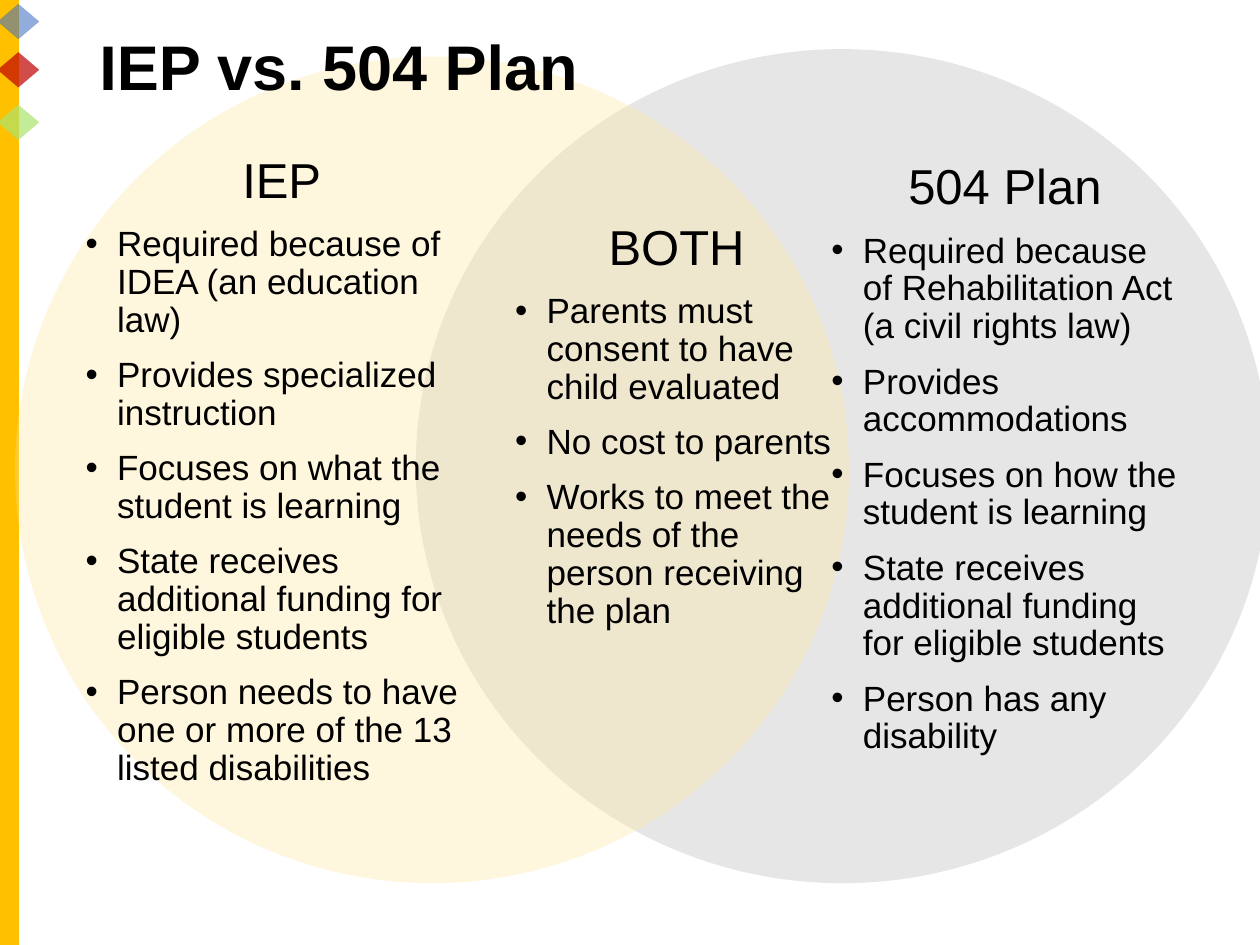
import lxml.etree
import pptx
import pptx.dml.color
import pptx.enum.shapes
import pptx.enum.text
import pptx.oxml.ns
import pptx.util

Pt = pptx.util.Pt
SHAPE = pptx.enum.shapes.MSO_SHAPE
ALIGN = pptx.enum.text.PP_ALIGN
ANCHOR = pptx.enum.text.MSO_ANCHOR
qn = pptx.oxml.ns.qn

TITLE_BOX = (49.7, 15.1, 620.6, 50.4)
SIDEBAR_BOX = (0, 0, 10.8, 540)
IEP_CIRCLE = (8.6, 32.4, 476.6, 472.3)
PLAN_CIRCLE = (237.6, 28.1, 487.4, 476.6)
DIAMONDS = [(2.2, "4472C4", 58), (29.8, "C00000", 70), (59.8, "ABE46D", 70)]

COLUMNS = [
    ((41.8, 85.7, 238.3, 324), "IEP", [
        "Required because of IDEA (an education law)",
        "Provides specialized instruction",
        "Focuses on what the student is learning",
        "State receives additional funding for eligible students",
        "Person needs to have one or more of the 13 listed disabilities",
    ]),
    ((287.3, 123.8, 198.7, 261.4), "BOTH", [
        "Parents must consent to have child evaluated",
        "No cost to parents",
        "Works to meet the needs of the person receiving the plan",
    ]),
    ((468, 89.3, 212.4, 352.8), "504 Plan", [
        "Required because of Rehabilitation Act (a civil rights law)",
        "Provides accommodations",
        "Focuses on how the student is learning",
        "State receives additional funding for eligible students",
        "Person has any disability",
    ]),
]


def color(value):
    """Turn a hex string into an RGB colour."""
    return pptx.dml.color.RGBColor.from_string(value)


def add_filled(slide, kind, box, fill, opacity=100):
    """Add an unlined shape with a fill of the given opacity in percent."""
    shape = slide.shapes.add_shape(kind, *map(Pt, box))
    shape.shadow.inherit = False
    shape.fill.solid()
    shape.fill.fore_color.rgb = color(fill)
    shape.line.fill.background()
    if opacity < 100:
        tint = shape.element.spPr.find(qn("a:solidFill")).find(qn("a:srgbClr"))
        lxml.etree.SubElement(tint, qn("a:alpha"), val=str(opacity * 1000))


def add_frame(slide, box, anchor=ANCHOR.TOP):
    """Add a wrapping text box and return its text frame."""
    frame = slide.shapes.add_textbox(*map(Pt, box)).text_frame
    frame.word_wrap = True
    frame.vertical_anchor = anchor
    return frame


def write(paragraph, text, size=20, bold=False, align=ALIGN.LEFT, before=10, bullet=False):
    """Fill a paragraph with formatted text."""
    paragraph.alignment = align
    paragraph.line_spacing = 0.9
    paragraph.space_before = Pt(before)
    run = paragraph.add_run()
    run.text = text
    run.font.name = "Arial"
    run.font.size = Pt(size)
    run.font.bold = bold
    run.font.color.rgb = color("000000")
    if bullet:
        properties = paragraph._p.get_or_add_pPr()
        properties.set("marL", str(Pt(18)))
        properties.set("indent", str(-Pt(18)))
        lxml.etree.SubElement(properties, qn("a:buFont"), typeface="Arial")
        lxml.etree.SubElement(properties, qn("a:buChar"), char="•")


def add_sidebar(slide, box):
    """Draw the gold edge bar and its diamonds."""
    left, top, _, _ = box
    add_filled(slide, SHAPE.RECTANGLE, box, "FFC000")
    for offset, fill, opacity in DIAMONDS:
        diamond = (left - 1.4, top + offset, 23.8, 20.2)
        add_filled(slide, SHAPE.DIAMOND, diamond, fill, opacity)


def add_title(slide, box):
    """Write the slide title."""
    frame = add_frame(slide, box, ANCHOR.MIDDLE)
    write(frame.paragraphs[0], "IEP vs. 504 Plan", size=36, bold=True, before=0)


def add_column(slide, box, heading, points):
    """Write a centred heading above its bulleted points."""
    frame = add_frame(slide, box)
    write(frame.paragraphs[0], heading, size=28, align=ALIGN.CENTER)
    for point in points:
        write(frame.add_paragraph(), point, bullet=True)


def main():
    """Build and save the comparison slide."""
    deck = pptx.Presentation()
    deck.slide_width, deck.slide_height = Pt(720), Pt(540)
    slide = deck.slides.add_slide(deck.slide_layouts[6])
    add_sidebar(slide, SIDEBAR_BOX)
    add_filled(slide, SHAPE.OVAL, PLAN_CIRCLE, "E7E6E6")
    add_filled(slide, SHAPE.OVAL, IEP_CIRCLE, "FFE699", 32)
    add_title(slide, TITLE_BOX)
    for box, heading, points in COLUMNS:
        add_column(slide, box, heading, points)
    deck.save("out.pptx")


if __name__ == "__main__":
    main()
